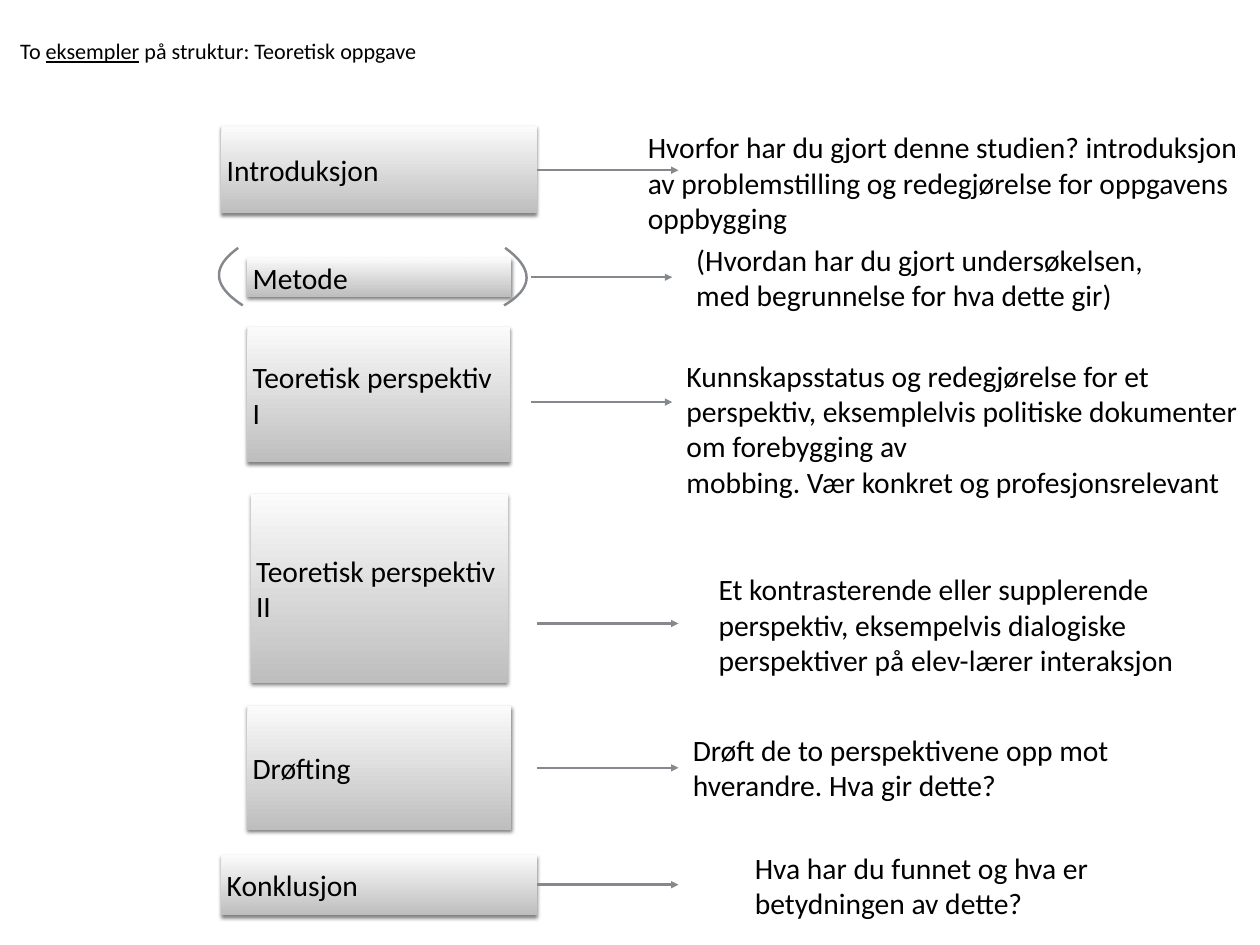
from lxml.etree import SubElement
from pptx import Presentation
from pptx.dml.color import RGBColor
from pptx.enum.shapes import MSO_CONNECTOR, MSO_SHAPE
from pptx.enum.text import MSO_ANCHOR, PP_ALIGN
from pptx.oxml.ns import qn
from pptx.util import Cm, Pt

INSET = 0.15
ARROW_LENGTH = 4.06
GREY = "85888D"

STAGES = [
    (["Introduksjon"], (6.35, 3.61, 9.04, 2.51), (15.39, 4.88),
     ["Hvorfor har du gjort denne studien? introduksjon av problemstilling "
      "og redegjørelse for oppgavens oppbygging"], (18.42, 3.05, 17.5, 4.37)),
    (["Metode"], (7.09, 7.39, 7.57, 1.12), (15.21, 7.95),
     ["(Hvordan har du gjort undersøkelsen,",
      "med begrunnelse for hva dette gir)"], (19.81, 6.78, 14.71, 2.34)),
    (["Teoretisk perspektiv", "I"], (7.09, 9.37, 7.54, 3.89), (15.21, 11.53),
     ["Kunnskapsstatus og redegjørelse for et perspektiv, eksemplelvis "
      "politiske dokumenter om forebygging av",
      "mobbing. Vær konkret og profesjonsrelevant"], (19.53, 9.58, 16.41, 5.41)),
    (["Teoretisk perspektiv", "II"], (7.19, 14.17, 7.37, 5.41), (15.39, 17.88),
     ["Et kontrasterende eller supplerende",
      "perspektiv, eksempelvis dialogiske",
      "perspektiver på elev-lærer interaksjon"], (20.45, 16.23, 14.61, 3.35)),
    (["Drøfting"], (7.09, 20.24, 7.57, 3.56), (15.39, 22.02),
     ["Drøft de to perspektivene opp mot hverandre. Hva gir dette?"],
     (19.71, 20.83, 15.6, 2.34)),
    (["Konklusjon"], (6.35, 24.51, 9.04, 1.73), (15.39, 25.37),
     ["Hva har du funnet og hva er", "betydningen av dette?"],
     (21.49, 24.21, 11.38, 2.34)),
]


def color(value):
    return RGBColor.from_string(value)


def write(sp, paragraphs, size):
    tf = sp.text_frame
    tf.word_wrap = True
    tf.vertical_anchor = MSO_ANCHOR.MIDDLE
    tf.margin_left = tf.margin_right = tf.margin_top = tf.margin_bottom = Cm(INSET)
    for i, runs in enumerate(paragraphs):
        p = tf.add_paragraph() if i else tf.paragraphs[0]
        p.alignment = PP_ALIGN.LEFT
        for text, underline in runs:
            r = p.add_run()
            r.text = text
            r.font.name = "Calibri"
            r.font.size = Pt(size)
            r.font.color.rgb = color("000000")
            r.font.underline = underline


def plain(lines):
    return [[(line, False)] for line in lines]


def add_text(slide, box, paragraphs, size):
    sp = slide.shapes.add_textbox(*map(Cm, box))
    write(sp, paragraphs, size)


def add_shadow(sp):
    sp.shadow.inherit = False
    effects = sp._element.spPr.find(qn("a:effectLst"))
    shadow = SubElement(effects, qn("a:outerShdw"), blurRad=str(Pt(3)),
                        dist=str(Pt(2)), dir="5400000", rotWithShape="0")
    black = SubElement(shadow, qn("a:srgbClr"), val="000000")
    SubElement(black, qn("a:alpha"), val="50000")


def add_block(slide, box, lines):
    sp = slide.shapes.add_shape(MSO_SHAPE.RECTANGLE, *map(Cm, box))
    sp.fill.gradient()
    sp.fill.gradient_angle = 270
    for stop, shade in zip(sp.fill.gradient_stops, ("FBFBFB", "BEBEBE")):
        stop.color.rgb = color(shade)
    sp.line.fill.background()
    add_shadow(sp)
    write(sp, plain(lines), 24)


def add_arrow(slide, x, y):
    arrow = slide.shapes.add_connector(
        MSO_CONNECTOR.STRAIGHT, Cm(x), Cm(y), Cm(x + ARROW_LENGTH), Cm(y))
    arrow.line.color.rgb = color(GREY)
    arrow.line.width = Pt(2)
    SubElement(arrow.line._get_or_add_ln(), qn("a:tailEnd"), type="triangle")
    SubElement(arrow._element.spPr, qn("a:effectLst"))


def add_bracket(slide, x, y, controls, steps=20):
    points = []
    for i in range(steps + 1):
        t = i / steps
        weights = ((1 - t) ** 3, 3 * t * (1 - t) ** 2, 3 * t ** 2 * (1 - t), t ** 3)
        dx, dy = (sum(w * c for w, c in zip(weights, axis)) for axis in zip(*controls))
        points.append((Cm(x + dx), Cm(y + dy)))
    builder = slide.shapes.build_freeform(*points[0])
    builder.add_line_segments(points[1:], close=False)
    sp = builder.convert_to_shape()
    sp.fill.background()
    sp.line.color.rgb = color(GREY)
    sp.line.width = Pt(2)
    sp.shadow.inherit = False


def add_brackets(slide, box):
    x, y, width, _ = box
    add_bracket(slide, x, y, [(-0.13, 1.37), (-0.99, 0.81), (-1.04, 0.28), (-0.26, -0.28)])
    add_bracket(slide, x + width, y,
                [(-0.21, 1.37), (0.63, 0.87), (0.66, 0.33), (-0.18, -0.28)])


def add_stage(slide, name, box, arrow, description, text_box):
    add_block(slide, box, name)
    add_arrow(slide, *arrow)
    add_text(slide, text_box, plain(description), 24)


def add_title(slide, box):
    add_text(slide, box, [[("To ", False), ("eksempler", True),
                           (" på struktur: Teoretisk oppgave", False)]], 18)


def main():
    prs = Presentation()
    prs.slide_width = Cm(36.12)
    prs.slide_height = Cm(27.1)
    slide = prs.slides.add_slide(prs.slide_layouts[6])
    add_title(slide, (0.43, 0.56, 25.78, 1.8))
    for stage in STAGES:
        add_stage(slide, *stage)
    add_brackets(slide, STAGES[1][1])
    prs.save("out.pptx")


if __name__ == "__main__":
    main()
